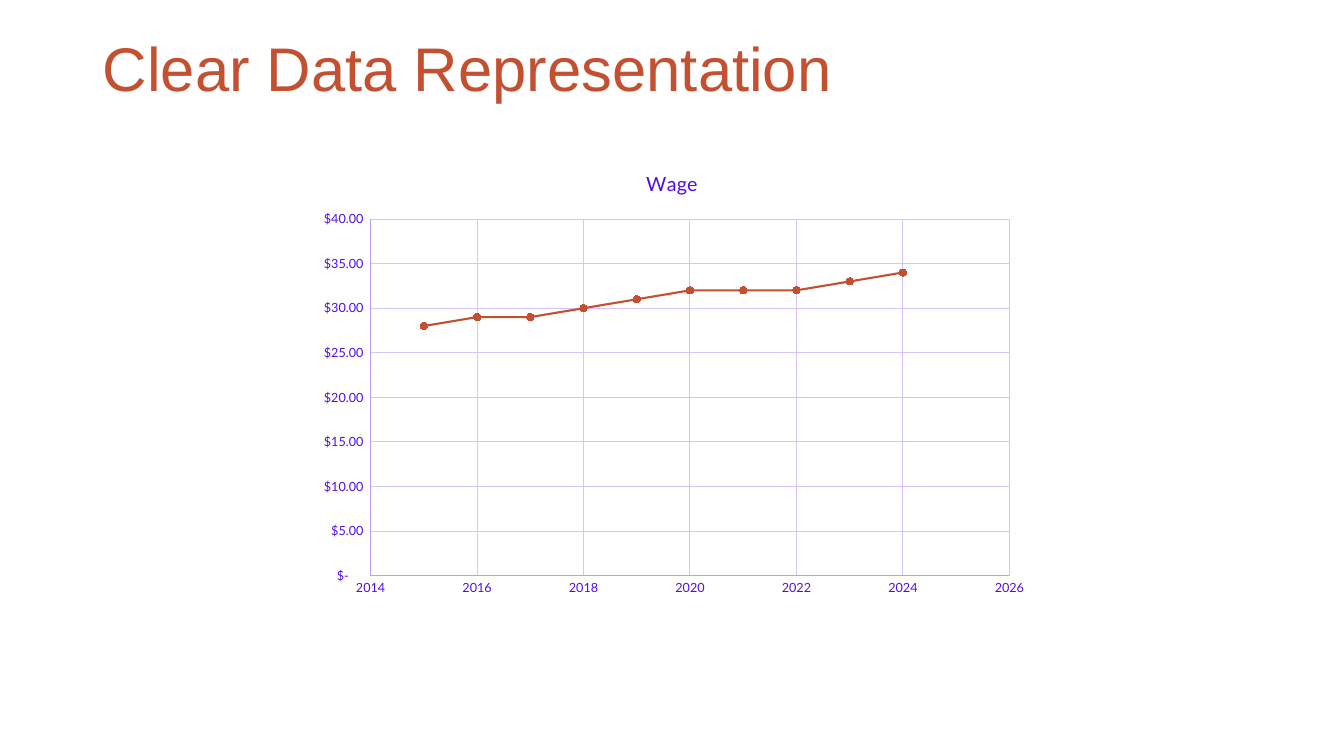
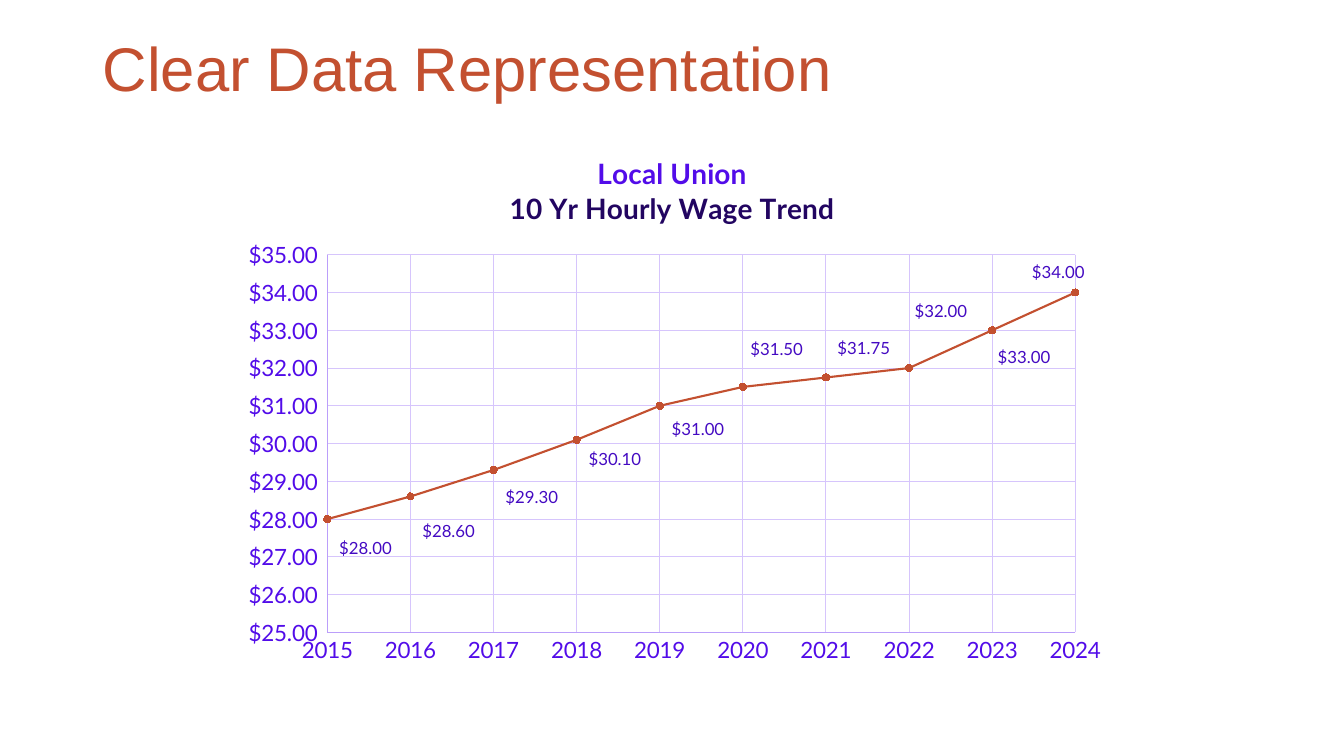
from lxml import etree
from pptx import Presentation
from pptx.chart.data import XyChartData
from pptx.dml.color import RGBColor
from pptx.enum.chart import (XL_CHART_TYPE, XL_LABEL_POSITION,
                             XL_MARKER_STYLE, XL_TICK_MARK)
from pptx.enum.text import MSO_ANCHOR
from pptx.oxml.ns import qn
from pptx.util import Cm, Pt

LINES = XL_CHART_TYPE.XY_SCATTER_LINES
CIRCLE = XL_MARKER_STYLE.CIRCLE
NO_TICK = XL_TICK_MARK.NONE
RIGHT = XL_LABEL_POSITION.RIGHT
MIDDLE = MSO_ANCHOR.MIDDLE

RUST = RGBColor(0xC3, 0x50, 0x30)
VIOLET = RGBColor(0x52, 0x0C, 0xE9)
DEEP_VIOLET = RGBColor(0x44, 0x0A, 0xC2)
INK = RGBColor(0x22, 0x05, 0x61)
AXIS_LINE = RGBColor(0xBB, 0x9E, 0xFA)
GRID_LINE = RGBColor(0xD6, 0xC5, 0xFC)

TITLE_FONT, CHART_FONT = "Arial", "Lato"
DOLLARS = '"$"#,##0.00'
ACCOUNTING = r'_("$"* #,##0.00_);_("$"* \(#,##0.00\);_("$"* "-"??_);_(@_)'

# Content: yearly wages, and one chart per slide (boxes in cm)
HEADING = "Clear Data Representation"
FIRST_YEAR = 2015
WAGES = [28, 28.6, 29.3, 30.1, 31, 31.5, 31.75, 32, 33, 34]
CHARTS = [
    dict(series="Wage", title=[("Wage", VIOLET)], title_size=14, bold=False,
         box=(7.7, 3.81, 18.47, 11.4), plot=(9.34, 5.52, 16.1, 8.99),
         axis_size=9, years=(2014, 2026, 2), wages=(0, 40, 5),
         digits=0, label_shifts=[]),
    dict(series="Series 1",
         title=[("Local Union", VIOLET), ("10 Yr Hourly Wage Trend", INK)],
         title_size=20, bold=True,
         box=(5.69, 3.4, 22.5, 13.56), plot=(8.25, 6.42, 18.85, 9.52),
         axis_size=16, years=(2015, 2024, 1), wages=(25, 35, 1), digits=2,
         # Shift of each value label from its place right of the point, cm
         label_shifts=[(0.11, 0.73), (0.11, 0.86), (0.11, 0.68), (0.11, 0.48),
                       (0.11, 0.58), (0, -0.96), (0.1, -0.76),
                       (-0.05, -1.44), (-0.05, 0.66), (-1.28, -0.53)]),
]


def set_font(font, size, color, name=CHART_FONT, bold=False):
    font.name, font.size, font.bold = name, Pt(size), bold
    font.color.rgb = color


def write(tf, lines, size, name=CHART_FONT, bold=False, spacing=None):
    """Fill a text frame with one paragraph per (text, colour) pair."""
    for i, (text, color) in enumerate(lines):
        p = tf.add_paragraph() if i else tf.paragraphs[0]
        p.line_spacing = spacing
        r = p.add_run()
        r.text = text
        set_font(r.font, size, color, name, bold)


def set_line(line, color, width=0.75):
    line.color.rgb = color
    line.width = Pt(width)


def make_layout(**values):
    layout = etree.Element(qn("c:layout"))
    manual = etree.SubElement(layout, qn("c:manualLayout"))
    for tag, value in values.items():
        etree.SubElement(manual, qn("c:" + tag)).set("val", str(value))
    return layout


def place_plot(chart, box, plot):
    left, top, width, height = box
    area = chart.element.find(".//" + qn("c:plotArea"))
    for old in area.findall(qn("c:layout")):
        area.remove(old)
    area.insert(0, make_layout(
        layoutTarget="inner", xMode="edge", yMode="edge",
        x=(plot[0] - left) / width, y=(plot[1] - top) / height,
        w=plot[2] / width, h=plot[3] / height))


def format_axis(axis, scale, size, number_format):
    axis.minimum_scale, axis.maximum_scale, axis.major_unit = scale
    axis.major_tick_mark = axis.minor_tick_mark = NO_TICK
    axis.has_major_gridlines = True
    set_line(axis.major_gridlines.format.line, GRID_LINE)
    set_line(axis.format.line, AXIS_LINE)
    labels = axis.tick_labels
    labels.number_format = number_format
    labels.number_format_is_linked = False
    set_font(labels.font, size, VIOLET)


def add_value_labels(chart, series, box, shifts):
    for i in range(len(shifts)):
        label = series.points[i].data_label
        set_font(label.font, 12, DEEP_VIOLET)
        label.position = RIGHT
    for element, (dx, dy) in zip(chart.element.iter(qn("c:dLbl")), shifts):
        element.insert(1, make_layout(x=dx / box[2], y=dy / box[3]))
    # No leader lines from the moved labels to their points
    for leader in chart.element.iter(qn("c:showLeaderLines")):
        leader.set("val", "0")


def add_wage_chart(s, cfg):
    data = XyChartData(number_format=DOLLARS)
    points = data.add_series(cfg["series"])
    for year, wage in enumerate(WAGES, FIRST_YEAR):
        points.add_data_point(year, round(wage, cfg["digits"]))
    box = cfg["box"]
    chart = s.shapes.add_chart(LINES, *map(Cm, box), data).chart
    set_font(chart.font, 10, INK)
    chart.has_legend = False
    chart.has_title = True
    chart.chart_title.include_in_layout = False
    write(chart.chart_title.text_frame, cfg["title"], cfg["title_size"],
          bold=cfg["bold"])
    place_plot(chart, box, cfg["plot"])

    # Axes
    size = cfg["axis_size"]
    format_axis(chart.category_axis, cfg["years"], size, "General")
    format_axis(chart.value_axis, cfg["wages"], size, ACCOUNTING)

    # Wage line
    chart.plots[0].vary_by_categories = False
    series = chart.plots[0].series[0]
    series.smooth = False
    set_line(series.format.line, RUST, 1.5)
    marker = series.marker
    marker.style, marker.size = CIRCLE, 5
    marker.format.fill.solid()
    marker.format.fill.fore_color.rgb = RUST
    set_line(marker.format.line, RUST)
    add_value_labels(chart, series, box, cfg["label_shifts"])


def add_heading(s):
    box = s.shapes.add_textbox(Cm(2.34), Cm(-0.03), Cm(29.21), Cm(3.68))
    tf = box.text_frame
    tf.word_wrap = True
    tf.vertical_anchor = MIDDLE
    write(tf, [(HEADING, RUST)], 44, name=TITLE_FONT, spacing=0.9)


def main():
    prs = Presentation()
    prs.slide_width, prs.slide_height = Cm(33.87), Cm(19.05)
    for cfg in CHARTS:
        s = prs.slides.add_slide(prs.slide_layouts[6])
        add_wage_chart(s, cfg)
        add_heading(s)
    prs.save("out.pptx")


if __name__ == "__main__":
    main()
